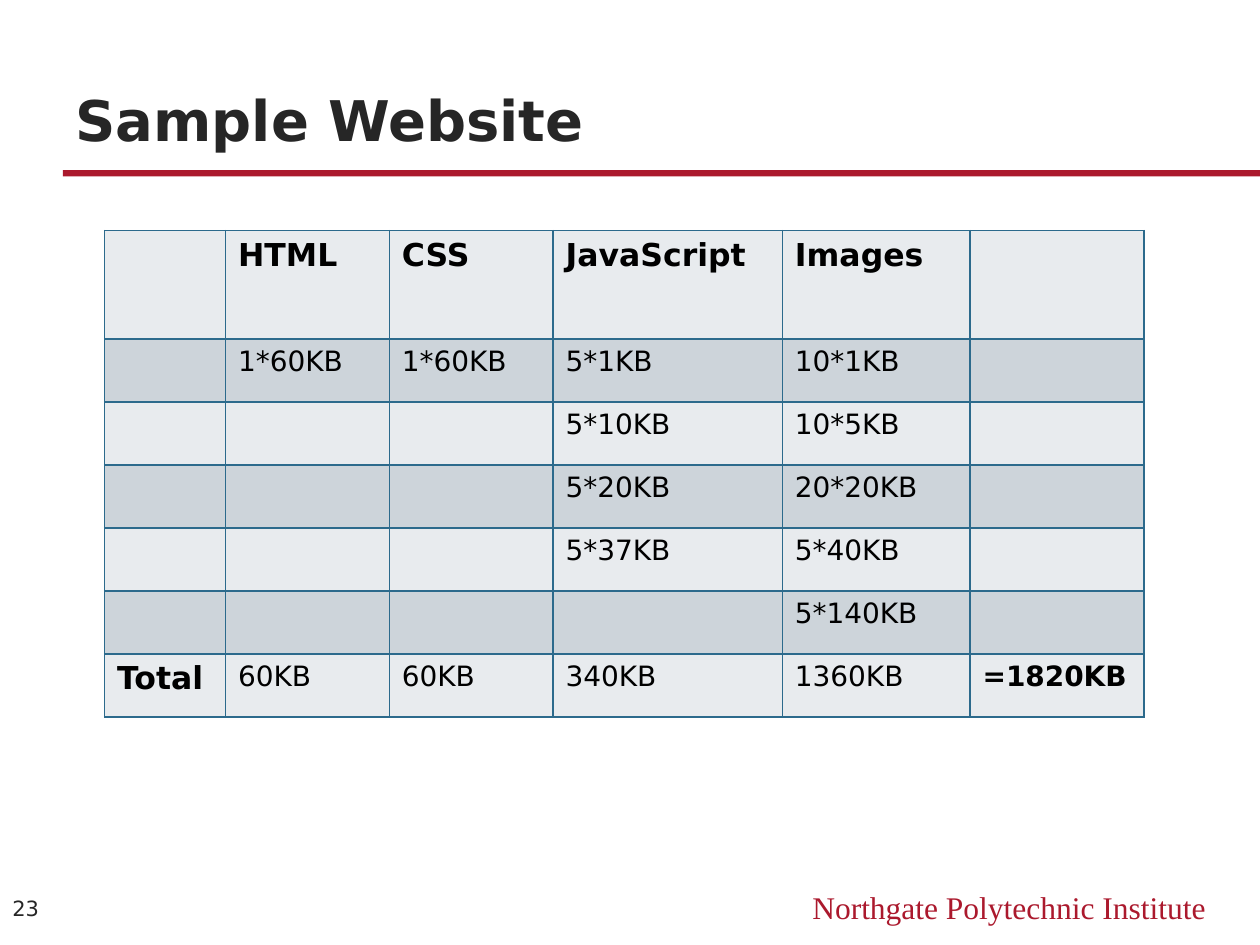
from lxml.etree import SubElement
from pptx import Presentation
from pptx.dml.color import RGBColor
from pptx.enum.shapes import MSO_SHAPE
from pptx.enum.text import MSO_ANCHOR, PP_ALIGN
from pptx.oxml.ns import qn
from pptx.util import Inches, Pt

CRIMSON = RGBColor(0xAB, 0x19, 0x2D)
CHARCOAL = RGBColor(0x26, 0x26, 0x26)
BLACK = RGBColor(0, 0, 0)
BORDER = RGBColor(0x2C, 0x6A, 0x8C)
BANDS = [RGBColor(0xE8, 0xEB, 0xEE), RGBColor(0xCD, 0xD4, 0xDA)]
SANS = "DejaVu Sans"
SERIF = "Times New Roman"

COLUMNS = [0.96, 1.3, 1.3, 1.82, 1.49, 1.38]
ROWS = [0.86] + [0.5] * 6
SIZES = [
    ["", "HTML", "CSS", "JavaScript", "Images", ""],
    ["", "1*60KB", "1*60KB", "5*1KB", "10*1KB", ""],
    ["", "", "", "5*10KB", "10*5KB", ""],
    ["", "", "", "5*20KB", "20*20KB", ""],
    ["", "", "", "5*37KB", "5*40KB", ""],
    ["", "", "", "", "5*140KB", ""],
    ["Total", "60KB", "60KB", "340KB", "1360KB", "=1820KB"],
]


def write(frame, text, size, color, font=SANS, bold=False):
    frame.text = text
    for run in frame.paragraphs[0].runs:
        run.font.name = font
        run.font.size = Pt(size)
        run.font.bold = bold
        run.font.color.rgb = color


def add_text(page, place, text, size, color, font=SANS, bold=False,
             anchor=MSO_ANCHOR.TOP, align=PP_ALIGN.LEFT):
    """Add a wrapped text box; place is left, top, width, height in inches."""
    box = page.shapes.add_textbox(*[Inches(length) for length in place])
    frame = box.text_frame
    frame.word_wrap = True
    frame.vertical_anchor = anchor
    write(frame, text, size, color, font, bold)
    frame.paragraphs[0].alignment = align


deck = Presentation()
deck.slide_width, deck.slide_height = Inches(10), Inches(7.5)
page = deck.slides.add_slide(deck.slide_layouts[6])

# Title, rule and footer
rule = page.shapes.add_shape(MSO_SHAPE.RECTANGLE, Inches(0.5), Inches(1.35),
                             Inches(9.5), Inches(0.05))
rule.shadow.inherit = False
rule.fill.solid()
rule.fill.fore_color.rgb = CRIMSON
rule.line.fill.background()

add_text(page, (6, 7, 3.67, 0.4), "Northgate Polytechnic Institute", 18,
         CRIMSON, font=SERIF, align=PP_ALIGN.RIGHT)
add_text(page, (0.5, 0.38, 9, 0.88), "Sample Website", 32, CHARCOAL,
         bold=True, anchor=MSO_ANCHOR.BOTTOM)
add_text(page, (0, 6.99, 0.5, 0.43), "23", 12, CHARCOAL,
         anchor=MSO_ANCHOR.MIDDLE)

# Table of file sizes
table = page.shapes.add_table(len(ROWS), len(COLUMNS), Inches(0.83), Inches(1.83),
                              Inches(sum(COLUMNS)), Inches(sum(ROWS))).table
for column, width in zip(table.columns, COLUMNS):
    column.width = Inches(width)
for row, height in zip(table.rows, ROWS):
    row.height = Inches(height)

for r, texts in enumerate(SIZES):
    for c, text in enumerate(texts):
        cell = table.cell(r, c)
        is_heading = r == 0 or c == 0
        is_sum = text.startswith("=")
        write(cell.text_frame, text, 18 if is_heading else 16, BLACK,
              bold=is_heading or is_sum)
        # Borders come before the fill in the cell's properties
        properties = cell._tc.get_or_add_tcPr()
        for side in ("a:lnL", "a:lnR", "a:lnT", "a:lnB"):
            line = SubElement(properties, qn(side), w=str(Pt(1)))
            fill = SubElement(line, qn("a:solidFill"))
            SubElement(fill, qn("a:srgbClr"), val=str(BORDER))
        cell.fill.solid()
        cell.fill.fore_color.rgb = BANDS[r % 2]

deck.save("out.pptx")
